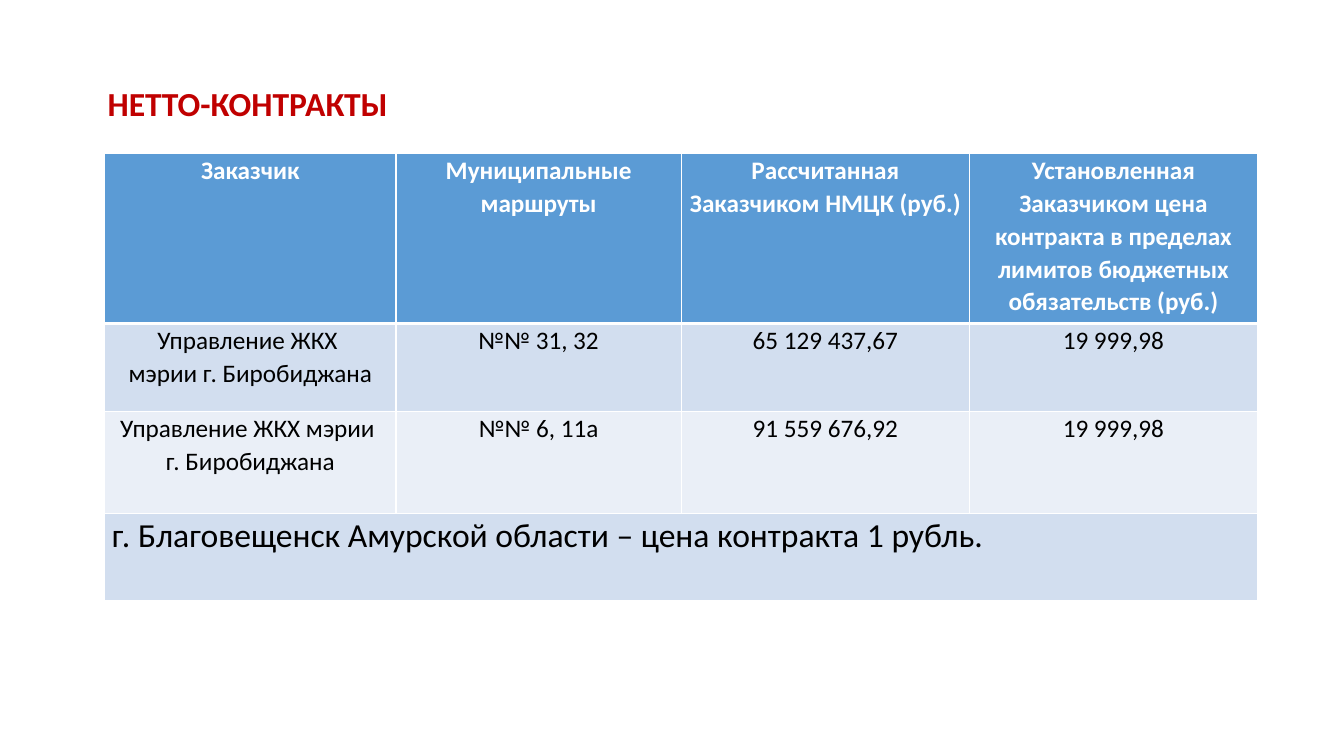
from dataclasses import dataclass

from lxml import etree
from pptx import Presentation
from pptx.dml.color import RGBColor
from pptx.enum.text import MSO_ANCHOR, PP_ALIGN
from pptx.oxml.ns import qn
from pptx.util import Cm, Pt

LEFT, CENTER, JUSTIFY = PP_ALIGN.LEFT, PP_ALIGN.CENTER, PP_ALIGN.JUSTIFY
MIDDLE, TOP = MSO_ANCHOR.MIDDLE, MSO_ANCHOR.TOP


@dataclass(frozen=True)
class Theme:
    font: str = "Calibri"
    title: str = "C00000"
    header: str = "5B9BD5"
    band: str = "D2DEEF"
    band_light: str = "EAEFF7"
    white: str = "FFFFFF"
    black: str = "000000"
    large: int = 24
    body: int = 18
    thin: int = 1
    thick: int = 3


@dataclass(frozen=True)
class Row:
    height: float
    fill: str
    cells: tuple[str, ...]
    color: str = Theme.black
    bold: bool = False
    size: int = Theme.body
    align: PP_ALIGN = CENTER
    top: int = Theme.thin
    bottom: int = Theme.thin


THEME = Theme()
COLUMN_WIDTHS = (7.34, 7.19, 7.26, 7.26)
ROWS = (
    Row(4.29, THEME.header,
        ("Заказчик", "Муниципальные маршруты", "Рассчитанная Заказчиком НМЦК (руб.)",
         "Установленная Заказчиком цена контракта в пределах лимитов "
         "бюджетных обязательств (руб.)"),
        color=THEME.white, bold=True, bottom=THEME.thick),
    Row(2.21, THEME.band,
        ("Управление ЖКХ \nмэрии г. Биробиджана", "№№ 31, 32",
         "65 129 437,67", "19 999,98"), top=THEME.thick),
    Row(2.57, THEME.band_light,
        ("Управление ЖКХ мэрии \nг. Биробиджана", "№№ 6, 11а",
         "91 559 676,92", "19 999,98")),
    Row(2.21, THEME.band,
        ("г. Благовещенск Амурской области – цена контракта 1 рубль.",),
        size=THEME.large, align=JUSTIFY),
)


def write_text(tf, text: str, *, size: int, color: str, bold: bool = False,
               align: PP_ALIGN = LEFT, spacing: float = 1.07) -> None:
    for i, line in enumerate(text.split("\n")):
        p = tf.paragraphs[0] if i == 0 else tf.add_paragraph()
        p.alignment = align
        p.line_spacing = spacing
        p.space_before = p.space_after = Pt(0)
        r = p.add_run()
        r.text = line
        r.font.name = THEME.font
        r.font.size = Pt(size)
        r.font.bold = bold
        r.font.color.rgb = RGBColor.from_string(color)


def set_borders(cell, row: Row) -> None:
    tc_pr = cell._tc.get_or_add_tcPr()
    widths = {"a:lnL": THEME.thin, "a:lnR": THEME.thin,
              "a:lnT": row.top, "a:lnB": row.bottom}
    for i, (tag, width) in enumerate(widths.items()):
        ln = etree.Element(qn(tag), w=str(Pt(width)))
        fill = etree.SubElement(ln, qn("a:solidFill"))
        etree.SubElement(fill, qn("a:srgbClr"), val=THEME.white)
        tc_pr.insert(i, ln)


def format_cell(cell, row: Row) -> None:
    cell.margin_left = cell.margin_right = Cm(0.18)
    cell.margin_top = cell.margin_bottom = Cm(0)
    cell.vertical_anchor = TOP
    cell.fill.solid()
    cell.fill.fore_color.rgb = RGBColor.from_string(row.fill)
    set_borders(cell, row)


def add_title(s, text: str) -> None:
    sp = s.shapes.title
    sp.left, sp.top, sp.width, sp.height = Cm(2.46), Cm(1.17), Cm(29.03), Cm(2.97)
    tf = sp.text_frame
    tf.word_wrap = True
    tf.vertical_anchor = MIDDLE
    write_text(tf, text, size=THEME.large, color=THEME.title, bold=True, spacing=0.9)


def add_contracts_table(s) -> None:
    table = s.shapes.add_table(
        len(ROWS), len(COLUMN_WIDTHS), Cm(2.64), Cm(3.86),
        Cm(sum(COLUMN_WIDTHS)), Cm(sum(row.height for row in ROWS))).table
    for column, width in zip(table.columns, COLUMN_WIDTHS):
        column.width = Cm(width)
    for i, row in enumerate(ROWS):
        table.rows[i].height = Cm(row.height)
        for j in range(len(COLUMN_WIDTHS)):
            format_cell(table.cell(i, j), row)
        for j, text in enumerate(row.cells):
            write_text(table.cell(i, j).text_frame, text, size=row.size,
                       color=row.color, bold=row.bold, align=row.align)
        if len(row.cells) == 1:
            table.cell(i, 0).merge(table.cell(i, len(COLUMN_WIDTHS) - 1))


def main() -> None:
    prs = Presentation()
    prs.slide_width, prs.slide_height = Cm(33.87), Cm(19.05)
    s = prs.slides.add_slide(prs.slide_layouts[5])
    add_title(s, "НЕТТО-КОНТРАКТЫ")
    add_contracts_table(s)
    prs.save("out.pptx")


if __name__ == "__main__":
    main()
